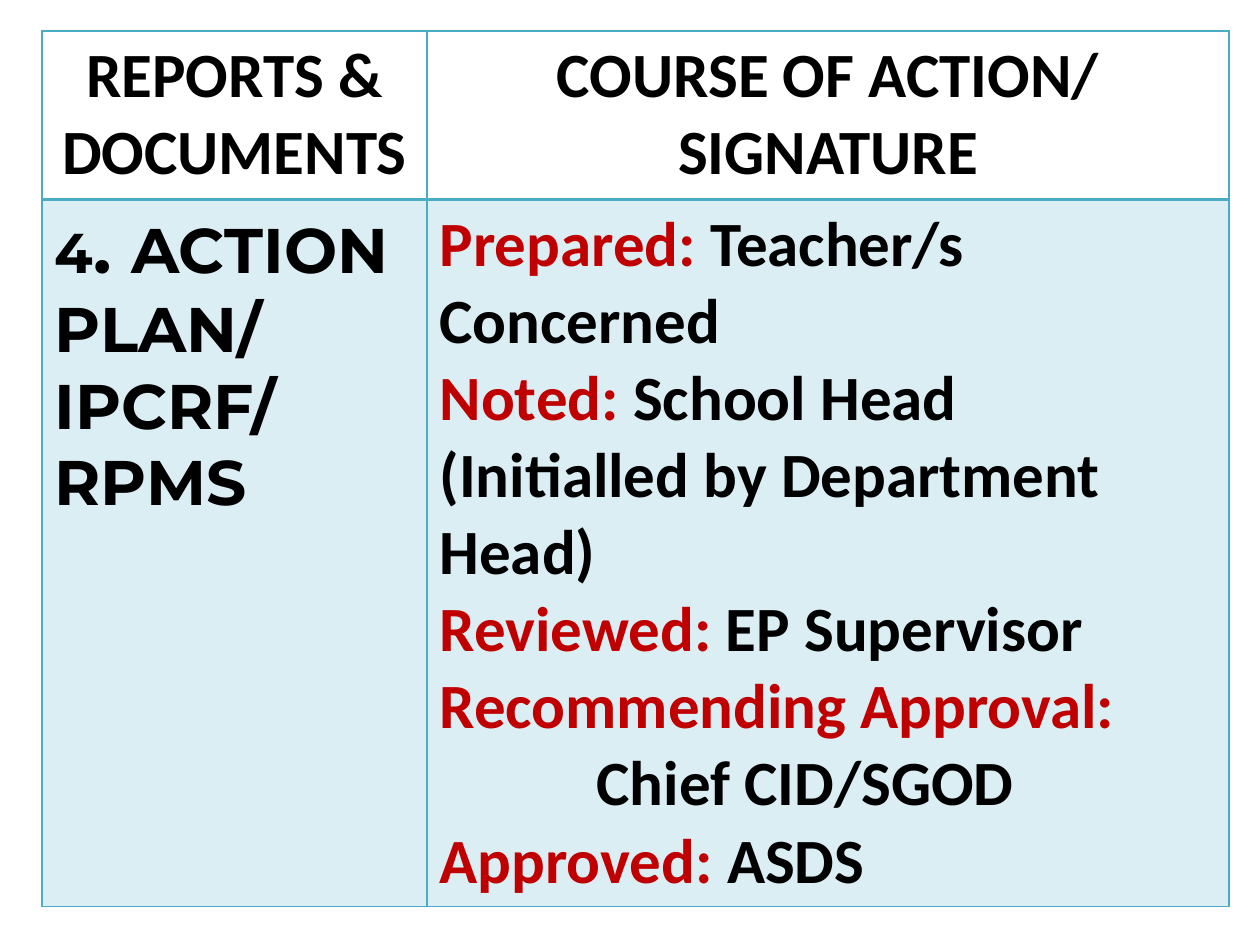
from dataclasses import dataclass
from lxml import etree
from pptx import Presentation, util as u
from pptx.dml.color import RGBColor
from pptx.enum import text
from pptx.oxml import ns

SCALE = 914400 / 126


@dataclass(frozen=True)
class Theme:
    """Colours, fonts and type sizes of the slide."""
    ink: str = "000000"
    red: str = "C00000"
    line: str = "4BACC6"
    tint: str = "DBEEF4"
    white: str = "FFFFFF"
    sans: str = "Calibri"
    wide: str = "Montserrat"
    small: int = 32
    base: int = 36
    large: int = 40


T = Theme()


@dataclass(frozen=True)
class Run:
    """A stretch of text in one format."""
    words: str
    hue: str = T.ink
    face: str = T.sans
    size: int = T.base


@dataclass(frozen=True)
class Para:
    """A paragraph with its indent in px."""
    runs: tuple[Run, ...]
    indent: int = 0


@dataclass(frozen=True)
class Box:
    """The content and look of one table cell."""
    paras: tuple[Para, ...]
    fill: str = T.white
    align: text.PP_ALIGN = text.PP_ALIGN.LEFT
    base: int = 1


def px(n: int) -> u.Emu:
    """Turn px into EMU."""
    return u.Emu(round(n * SCALE))


def step(label: str, who: str = "") -> Para:
    """Make a red label followed by the person who acts."""
    runs = (Run(label, T.red), Run(" " + who)) if who else (Run(label, T.red),)
    return Para(runs)


def head(words: str) -> Box:
    """Make a heading cell."""
    return Box((Para((Run(words),)),), align=text.PP_ALIGN.CENTER, base=2)


def edge(cell, base: int) -> None:
    """Draw the four borders of a cell."""
    props = cell._tc.get_or_add_tcPr()
    for i, (side, wide) in enumerate(dict(L=1, R=1, T=1, B=base).items()):
        line = etree.Element(ns.qn(f"a:ln{side}"), w=str(u.Pt(wide)))
        fill = etree.SubElement(line, ns.qn("a:solidFill"))
        etree.SubElement(fill, ns.qn("a:srgbClr"), val=T.line)
        props.insert(i, line)


def write(cell, box: Box) -> None:
    """Fill a cell with its text, colour and borders."""
    cell.fill.solid()
    cell.fill.fore_color.rgb = RGBColor.from_string(box.fill)
    edge(cell, box.base)
    frame = cell.text_frame
    for i, para in enumerate(box.paras):
        p = frame.add_paragraph() if i else frame.paragraphs[0]
        p.alignment = box.align
        if para.indent:
            p._p.get_or_add_pPr().set("marL", str(px(para.indent)))
        for run in para.runs:
            r = p.add_run()
            r.text = run.words
            for key, val in dict(name=run.face, size=u.Pt(run.size), bold=True).items():
                setattr(r.font, key, val)
            r.font.color.rgb = RGBColor.from_string(run.hue)


COLS = (385, 802)
ROWS = (169, 706 - 14)
PLAN = Box((
    Para((Run("4", face=T.wide, size=T.small), Run(". ", face=T.wide, size=T.large),
          Run("ACTION PLAN/", face=T.wide))),
    Para((Run("IPCRF/ RPMS", face=T.wide),)),
), T.tint)
SIGN = Box((
    step("Prepared:", "Teacher/s Concerned"),
    step("Noted:", "School Head (Initialled by Department Head)"),
    step("Reviewed:", "EP Supervisor"),
    step("Recommending Approval:"),
    Para((Run("Chief CID/SGOD"),), 157),
    step("Approved:", "ASDS"),
), T.tint)
GRID = ((head("REPORTS & DOCUMENTS"), head("COURSE OF ACTION/ SIGNATURE")), (PLAN, SIGN))


def main() -> None:
    """Build and save the slide."""
    deck = Presentation()
    deck.slide_width, deck.slide_height = px(1260), px(945)
    slide = deck.slides.add_slide(deck.slide_layouts[6])
    table = slide.shapes.add_table(
        len(ROWS), len(COLS), px(42), px(31), px(sum(COLS)), px(sum(ROWS))).table
    for key in ("first_row", "horz_banding"):
        setattr(table, key, False)
    for col, wide in zip(table.columns, COLS):
        col.width = px(wide)
    for row, tall, boxes in zip(table.rows, ROWS, GRID):
        row.height = px(tall)
        for cell, box in zip(row.cells, boxes):
            write(cell, box)
    deck.save("out.pptx")


if __name__ == "__main__":
    main()
